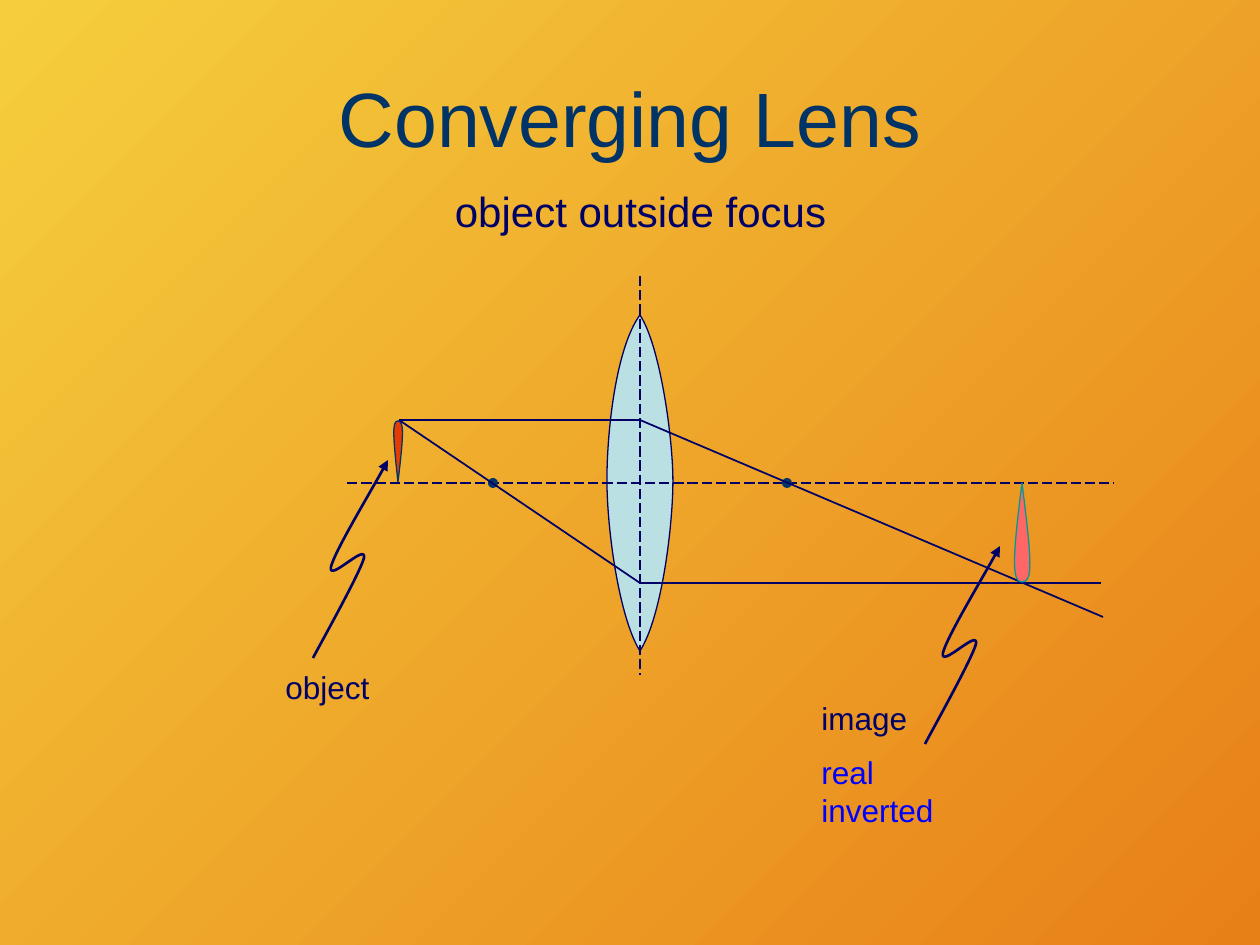
"""Build the converging lens ray diagram slide."""
from dataclasses import dataclass
from typing import Optional

from lxml.etree import SubElement
from pptx import Presentation
from pptx.dml.color import RGBColor
from pptx.enum.dml import MSO_LINE
from pptx.enum.shapes import MSO_CONNECTOR, MSO_SHAPE
from pptx.enum.text import MSO_ANCHOR, PP_ALIGN
from pptx.oxml.ns import qn
from pptx.util import Emu, Pt

SCALE = 914400 / 126
FONT = "Arial"
COLORS = {
    "yellow": "F5CE3D", "orange": "E88018", "navy": "000066",
    "title": "003366", "glass": "BBE0E3", "red": "E53C05",
    "pink": "FF6666", "teal": "009999", "blue": "0000FF",
}
AXIS_Y, LENS_X = 483, 640
SQUIGGLE = [(0, 0), (9, -17), (47, -85), (51, -100), (54, -116), (15, -75),
            (18, -91), (22, -107), (63, -175), (75, -198)]


@dataclass
class Line:
    x1: int
    y1: int
    x2: int
    y2: int
    width: float = 1
    dashed: bool = False


@dataclass
class Curve:
    points: list[tuple[int, int]]
    line: str
    fill: Optional[str] = None
    width: float = 0.75
    arrow: bool = False


@dataclass
class Label:
    box: tuple[int, int, int, int]
    paragraphs: list[tuple[str, str]]
    size: int = 18
    align: PP_ALIGN = PP_ALIGN.LEFT


def squiggle(x: int, y: int) -> Curve:
    points = [(x + dx, y + dy) for dx, dy in SQUIGGLE]
    return Curve(points, "navy", width=1.5, arrow=True)


OBJECT = Curve([(398, 482), (404, 433), (404, 421), (398, 421),
                (392, 421), (393, 435), (398, 482)], "title", "red")
LENS = Curve([(640, 315), (660, 345), (673, 437), (673, 481),
              (673, 525), (662, 617), (640, 651),
              (619, 617), (607, 529), (607, 480),
              (607, 431), (616, 348), (640, 315)], "navy", "glass")
IMAGE = Curve([(1022, 483), (1032, 562), (1033, 582), (1022, 582),
               (1012, 582), (1012, 561), (1022, 483)], "teal", "pink")
AXES = [
    Line(347, AXIS_Y, 1114, AXIS_Y, 0.75, True),
    Line(LENS_X, 276, LENS_X, 675, 0.75, True),
]
RAYS = [
    Line(399, 420, LENS_X, 420),
    Line(LENS_X, 420, 1103, 617),
    Line(399, 420, LENS_X, 583),
    Line(LENS_X, 583, 1101, 583),
]
FOCI = [(493, AXIS_Y), (787, AXIS_Y)]
LABELS = [
    Label((399, 179, 483, 63), [("object outside focus", "navy")], 24, PP_ALIGN.CENTER),
    Label((273, 662, 123, 50), [("object", "navy")]),
    Label((809, 693, 158, 145), [("image", "navy"), ("real\vinverted", "blue")]),
]


def px(n: float) -> Emu:
    return Emu(round(n * SCALE))


def rgb(name: str) -> RGBColor:
    return RGBColor.from_string(COLORS[name])


def style_text(p, size: int, color: str, align: PP_ALIGN) -> None:
    p.alignment = align
    for r in p.runs:
        r.font.name = FONT
        r.font.size = Pt(size)
        r.font.color.rgb = rgb(color)


def add_background(s) -> None:
    fill = s.background.fill
    fill.gradient()
    fill.gradient_angle = 315
    for stop, name in zip(fill.gradient_stops, ("yellow", "orange")):
        stop.color.rgb = rgb(name)


def add_title(s, text: str) -> None:
    sp = s.shapes.title
    sp.left, sp.top, sp.width, sp.height = map(px, (63, 38, 1134, 158))
    tf = sp.text_frame
    tf.text = text
    tf.vertical_anchor = MSO_ANCHOR.MIDDLE
    style_text(tf.paragraphs[0], 44, "title", PP_ALIGN.CENTER)


def add_line(s, line: Line) -> None:
    cxn = s.shapes.add_connector(
        MSO_CONNECTOR.STRAIGHT, *map(px, (line.x1, line.y1, line.x2, line.y2)))
    cxn.line.color.rgb = rgb("navy")
    cxn.line.width = Pt(line.width)
    if line.dashed:
        cxn.line.dash_style = MSO_LINE.LONG_DASH
    SubElement(cxn._element.spPr, qn("a:effectLst"))


def add_curve(s, curve: Curve) -> None:
    start, *rest = curve.points
    builder = s.shapes.build_freeform(*start, scale=SCALE)
    builder.add_line_segments(rest, close=curve.fill is not None)
    sp = builder.convert_to_shape()
    segments = sp._element.xpath(".//a:lnTo")
    for i in range(0, len(segments), 3):
        segments[i].tag = qn("a:cubicBezTo")
        for extra in segments[i + 1:i + 3]:
            segments[i].append(extra[0])
            extra.getparent().remove(extra)
    sp.shadow.inherit = False
    sp.line.color.rgb = rgb(curve.line)
    sp.line.width = Pt(curve.width)
    if curve.fill:
        sp.fill.solid()
        sp.fill.fore_color.rgb = rgb(curve.fill)
    else:
        sp.fill.background()
    if curve.arrow:
        SubElement(sp.line._get_or_add_ln(), qn("a:tailEnd"), type="triangle")


def add_focus(s, x: int, y: int, radius: int = 5) -> None:
    sp = s.shapes.add_shape(
        MSO_SHAPE.OVAL, *map(px, (x - radius, y - radius, 2 * radius, 2 * radius)))
    sp.shadow.inherit = False
    sp.fill.solid()
    sp.fill.fore_color.rgb = rgb("title")
    sp.line.fill.background()


def add_label(s, label: Label) -> None:
    tf = s.shapes.add_textbox(*map(px, label.box)).text_frame
    tf.word_wrap = True
    for i, (text, color) in enumerate(label.paragraphs):
        p = tf.add_paragraph() if i else tf.paragraphs[0]
        p.text = text
        p.space_before = Pt(label.size / 2 if i else 0)
        style_text(p, label.size, color, label.align)


def main() -> None:
    prs = Presentation()
    prs.slide_width, prs.slide_height = px(1260), px(945)
    s = prs.slides.add_slide(prs.slide_layouts[5])
    add_background(s)
    add_title(s, "Converging Lens")
    for curve in (OBJECT, LENS):
        add_curve(s, curve)
    for line in AXES:
        add_line(s, line)
    for x, y in FOCI:
        add_focus(s, x, y)
    for line in RAYS:
        add_line(s, line)
    for curve in (squiggle(313, 658), IMAGE, squiggle(925, 744)):
        add_curve(s, curve)
    for label in LABELS:
        add_label(s, label)
    prs.save("out.pptx")


if __name__ == "__main__":
    main()
